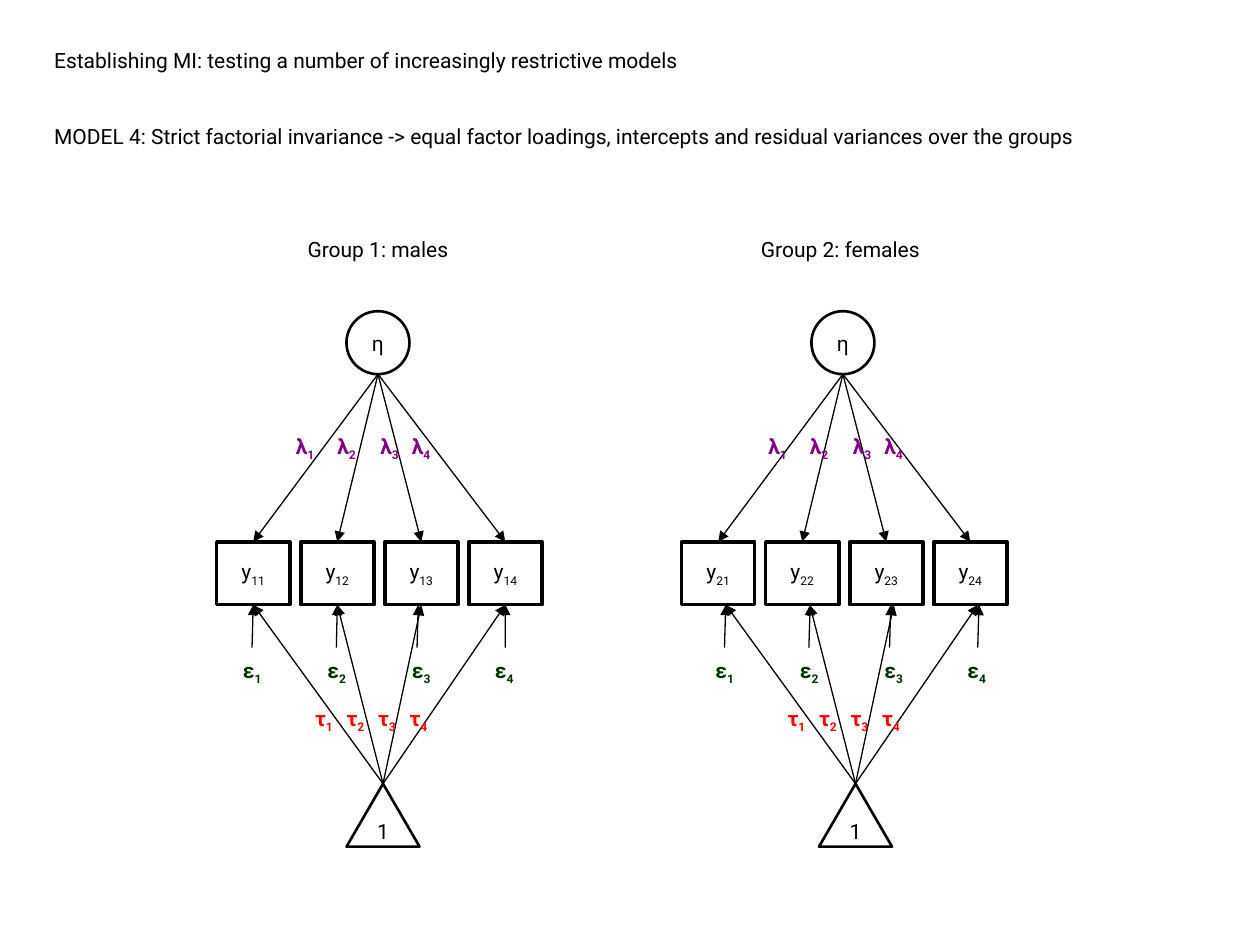
from lxml import etree
from pptx import Presentation
from pptx import util as u
from pptx.dml.color import RGBColor
from pptx.enum import shapes as sh, text as t
from pptx.oxml.ns import qn

HEADING = [
    "Establishing MI: testing a number of increasingly restrictive models",
    "MODEL 4: Strict factorial invariance -> equal factor loadings, "
    "intercepts and residual variances over the groups",
]
# shift: move of the factor part; lower_shift: move of labels, residuals, intercepts
GROUPS = [
    {"name": "Group 1: males", "shift": 0, "lower_shift": 0},
    {"name": "Group 2: females", "shift": 3.69, "lower_shift": 3.75},
]
# symbol, colour, top, side inset, left of each label
PARAMETERS = [
    ("λ", "800080", 3.39, 0.1, [2.25, 2.58, 2.92, 3.17]),
    ("ε", "003300", 5.17, 0.1, [1.83, 2.5, 3.17, 3.83]),
    ("τ", "FF0000", 5.55, 0, [2.5, 2.75, 3, 3.25]),
]
RESIDUAL_X = [2.0, 2.67, 3.31, 4.01]

INK = "000000"
ITEMS = range(4)
ITEM_LEFT, ITEM_TOP, ITEM_STEP = 1.72, 4.3, 0.667
ITEM_W, ITEM_H = 0.58, 0.5
ITEM_BOTTOM = ITEM_TOP + ITEM_H
FACTOR_LEFT, FACTOR_TOP, FACTOR_SIZE = 2.75, 2.47, 0.5
CONSTANT_LEFT, CONSTANT_TOP = 2.75, 6.22
RESIDUAL_START = 5.14
TOP, BOTTOM = 0, 2

prs = Presentation()
prs.slide_width, prs.slide_height = u.Inches(10), u.Inches(7.5)
slide = prs.slides.add_slide(prs.slide_layouts[5])


def rgb(value):
    return RGBColor.from_string(value)


def write(shape, lines, sub="", color=INK, bold=False, align=t.PP_ALIGN.LEFT,
          anchor=t.MSO_ANCHOR.TOP, side=0.1, gap=0):
    """Put lines into a shape; sub is a subscript after each line, gap the points between lines."""
    frame = shape.text_frame
    frame.word_wrap = True
    frame.auto_size = t.MSO_AUTO_SIZE.NONE
    frame.vertical_anchor = anchor
    frame.margin_left = frame.margin_right = u.Inches(side)
    frame.margin_top = frame.margin_bottom = u.Inches(0.05)
    for n, line in enumerate(lines):
        paragraph = frame.add_paragraph() if n else frame.paragraphs[0]
        paragraph.alignment = align
        paragraph.space_before = u.Pt(gap if n else 0)
        for part, baseline in ((line, None), (sub, "-25000")):
            if not part:
                continue
            run = paragraph.add_run()
            run.text = part
            run.font.name, run.font.size, run.font.bold = "Roboto", u.Pt(12), bold
            run.font.color.rgb = rgb(color)
            if baseline:
                run.font._element.set("baseline", baseline)


def label(left, top, width, height, line, **style):
    box = slide.shapes.add_textbox(*map(u.Inches, (left, top, width, height)))
    write(box, [line], **style)


def node(kind, left, top, width, height, line, weight, fill=None, **style):
    shape = slide.shapes.add_shape(kind, *map(u.Inches, (left, top, width, height)))
    shape.shadow.inherit = False
    if fill:
        shape.fill.solid()
        shape.fill.fore_color.rgb = rgb(fill)
    else:
        shape.fill.background()
    shape.line.color.rgb, shape.line.width = rgb(INK), u.Pt(weight)
    write(shape, [line], align=t.PP_ALIGN.CENTER, anchor=t.MSO_ANCHOR.MIDDLE, **style)
    return shape


def arrow(start, end, item, side, source=None):
    """Draw an arrow, joined to the item's side if it ends at its middle."""
    line = slide.shapes.add_connector(sh.MSO_CONNECTOR.STRAIGHT, *map(u.Inches, start + end))
    line.line.color.rgb, line.line.width = rgb(INK), u.Pt(0.75)
    outline = line.line._get_or_add_ln()
    etree.SubElement(outline, qn("a:tailEnd"), type="triangle")
    etree.SubElement(line._element.spPr, qn("a:effectLst"))
    if source is not None:
        line.begin_connect(source, TOP)
    if abs(item.left + item.width / 2 - u.Inches(end[0])) < u.Inches(0.02):
        line.end_connect(item, side)


def draw_group(number, name, shift, lower_shift):
    label(2.25 + (shift and 3.67), 1.83, 1.5, 0.3, name, align=t.PP_ALIGN.CENTER)

    node(sh.MSO_SHAPE.OVAL, FACTOR_LEFT + shift, FACTOR_TOP,
         FACTOR_SIZE, FACTOR_SIZE, "η", 1.5, side=0)
    constant = node(sh.MSO_SHAPE.ISOSCELES_TRIANGLE, CONSTANT_LEFT + lower_shift,
                    CONSTANT_TOP, ITEM_W, ITEM_H, "1", 1.5, side=0)
    factor_foot = (FACTOR_LEFT + FACTOR_SIZE / 2 + shift, FACTOR_TOP + FACTOR_SIZE)
    constant_tip = (CONSTANT_LEFT + ITEM_W / 2 + lower_shift, CONSTANT_TOP)

    for i in ITEMS:
        left = ITEM_LEFT + i * ITEM_STEP
        middle = left + ITEM_W / 2
        item = node(sh.MSO_SHAPE.RECTANGLE, left + shift, ITEM_TOP, ITEM_W, ITEM_H,
                    "y", 2, fill="FFFFFF", sub=f"{number}{i + 1}")
        residual = RESIDUAL_X[i] + lower_shift
        arrow(factor_foot, (middle + shift, ITEM_TOP), item, TOP)
        arrow((residual, RESIDUAL_START), (residual + 0.01, ITEM_BOTTOM), item, BOTTOM)
        arrow(constant_tip, (middle + lower_shift, ITEM_BOTTOM), item, BOTTOM, constant)

    for symbol, color, top, side, lefts in PARAMETERS:
        for i in ITEMS:
            label(lefts[i] + lower_shift, top, 0.42, 0.33, symbol, sub=str(i + 1),
                  color=color, bold=True, side=side)


heading = slide.shapes.title
heading.left, heading.top, heading.width, heading.height = map(u.Inches, (0.33, 0.33, 9.33, 1.1))
write(heading, HEADING, gap=29)
for number, group in enumerate(GROUPS, 1):
    draw_group(number, **group)

prs.save("out.pptx")
